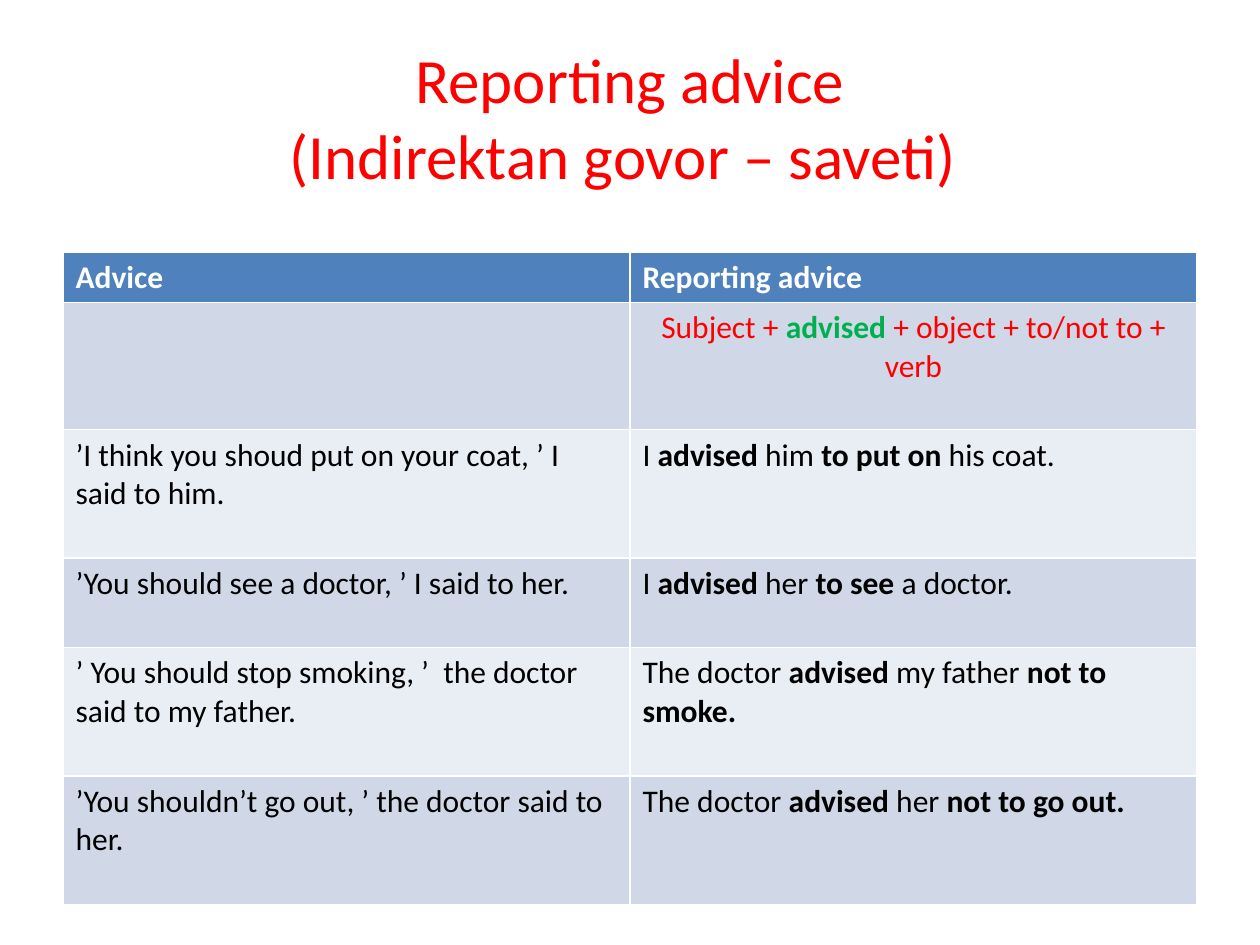
from pptx import Presentation
from pptx.dml.color import RGBColor
from pptx.enum.text import MSO_ANCHOR, PP_ALIGN
from pptx.util import Inches, Pt


def paint(font, color):
    font.color.rgb = RGBColor.from_string(color)


def write(para, text, size, color, mark=None):
    """Write text on one paragraph; parts between asterisks are bold."""
    para.font.name = "Calibri"
    para.font.size = Pt(size)
    paint(para.font, color)
    for i, part in enumerate(text.split("*")):
        if part:
            run = para.add_run()
            run.text = part
            run.font.bold = i % 2 == 1
            paint(run.font, mark if mark and i % 2 else color)


deck = Presentation()
deck.slide_width, deck.slide_height = Inches(10), Inches(7.5)
slide = deck.slides.add_slide(deck.slide_layouts[6])
left, width = Inches(0.5), Inches(9)

# Title
frame = slide.shapes.add_textbox(left, Inches(0.3), width, Inches(1.25)).text_frame
frame.word_wrap = True
frame.vertical_anchor = MSO_ANCHOR.MIDDLE
title = frame.paragraphs[0]
title.alignment = PP_ALIGN.CENTER
title.text = "Reporting advice\v(Indirektan govor – saveti) "
title.font.name = "Calibri"
title.font.size = Pt(36)
paint(title.font, "FF0000")

# Table: row height in inches, advice, reported advice
rows = [
    (0.4, "*Advice*", "*Reporting advice*"),
    (1.01, "", "Subject + *advised* + object + to/not to + verb"),
    (1.02, "’I think you shoud put on your coat, ’ I said to him.",
     "I *advised* him *to put on* his coat."),
    (0.71, "’You should see a doctor, ’ I said to her.",
     "I *advised* her *to see *a doctor."),
    (1.02, "’ You should stop smoking, ’  the doctor\nsaid to my father.",
     "The doctor *advised* my father *not to smoke.*"),
    (1.02, "’You shouldn’t go out, ’ the doctor said to her.",
     "The doctor *advised* her *not to go out.*"),
]
high = Inches(sum(row[0] for row in rows))
table = slide.shapes.add_table(len(rows), 2, left, Inches(2), width, high).table

for r, (tall, *texts) in enumerate(rows):
    table.rows[r].height = Inches(tall)
    back = "4F81BD" if r == 0 else ("E9EDF4", "D0D8E8")[r % 2]
    color, mark = {0: ("FFFFFF", None), 1: ("FF0000", "00B050")}.get(r, ("000000", None))
    for c, text in enumerate(texts):
        cell = table.cell(r, c)
        cell.fill.solid()
        cell.fill.fore_color.rgb = RGBColor.from_string(back)
        for i, line in enumerate(text.split("\n")):
            frame = cell.text_frame
            para = frame.add_paragraph() if i else frame.paragraphs[0]
            write(para, line, 18, color, mark)

# The pattern row is centred
table.cell(1, 1).text_frame.paragraphs[0].alignment = PP_ALIGN.CENTER

deck.save("out.pptx")
